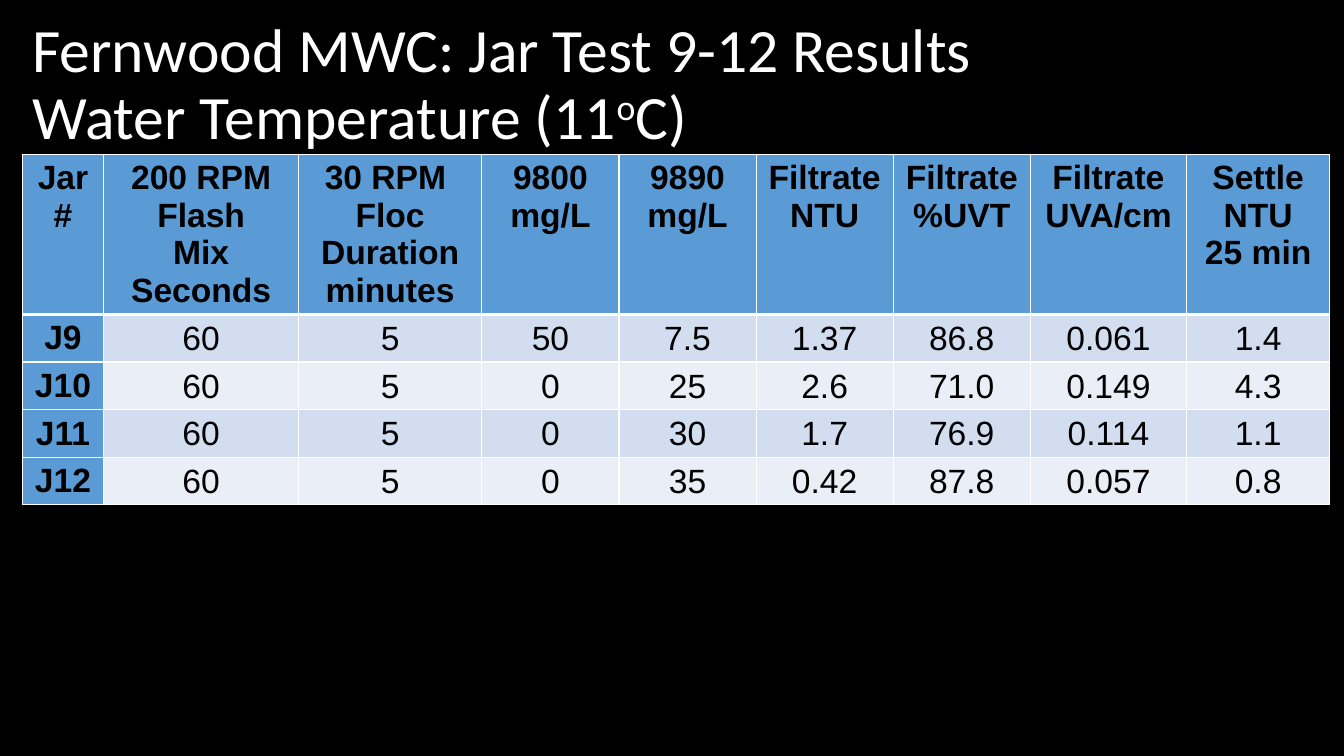
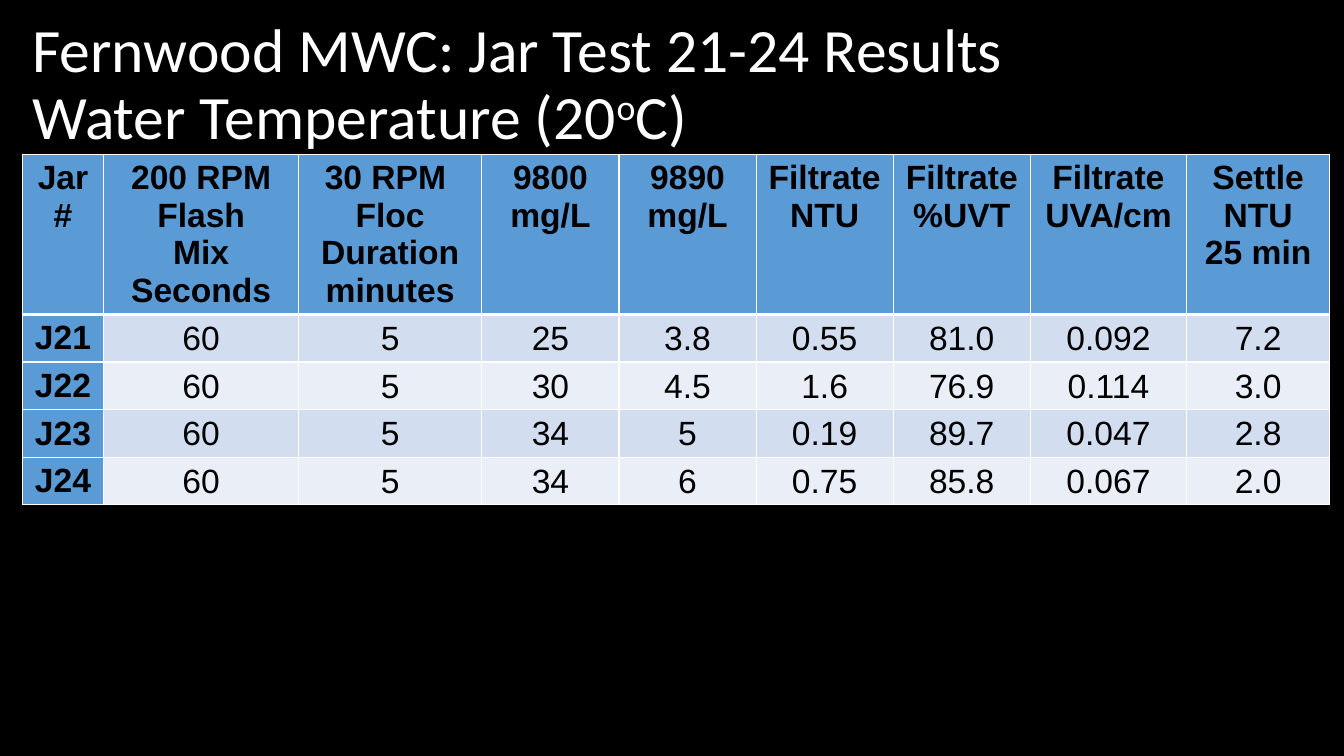
"""Build two slides of jar test results, one table per water temperature."""
from dataclasses import dataclass

from lxml import etree
from pptx import Presentation
from pptx.dml.color import RGBColor
from pptx.enum.text import MSO_ANCHOR, MSO_AUTO_SIZE, PP_ALIGN
from pptx.oxml.ns import qn
from pptx.util import Inches, Pt

CENTER, LEFT = PP_ALIGN.CENTER, PP_ALIGN.LEFT
MIDDLE, TOP = MSO_ANCHOR.MIDDLE, MSO_ANCHOR.TOP
NO_AUTOFIT = MSO_AUTO_SIZE.NONE

BLACK = RGBColor(0x00, 0x00, 0x00)
WHITE = RGBColor(0xFF, 0xFF, 0xFF)
HEADING_BLUE = RGBColor(0x5B, 0x9B, 0xD5)
ROW_BANDS = (RGBColor(0xD2, 0xDE, 0xEF), RGBColor(0xEA, 0xEF, 0xF7))

TITLE_BOX = {"left": Inches(0.22), "top": Inches(0.13),
             "width": Inches(12.2), "height": Inches(1.45)}
TITLE_FRAME = {"vertical_anchor": MIDDLE, "auto_size": NO_AUTOFIT, "word_wrap": True}
TITLE_PARAGRAPH = {"alignment": LEFT, "line_spacing": 0.9}
TITLE_FONT = {"name": "Calibri", "size": Pt(44)}
CELL_FONT = {"name": "Arial", "size": Pt(24)}
HEADING_CELL = {"vertical_anchor": TOP}
READING_CELL = {"vertical_anchor": MIDDLE, "margin_left": Inches(0.01),
                "margin_right": Inches(0.01), "margin_top": Inches(0.01),
                "margin_bottom": 0}

TABLE_LEFT, TABLE_TOP = 0.22, 1.53
COLUMN_WIDTHS = (0.81, 1.93, 1.82, 1.36, 1.36, 1.36, 1.36, 1.55, 1.42)
HEADING_HEIGHT, READING_HEIGHT = 1.59, 0.47
THIN_RULE, HEADING_RULE = 1, 3
HEADINGS = ("Jar\v#", "200 RPM\nFlash\nMix\nSeconds", "30 RPM \nFloc\nDuration\nminutes",
            "9800\nmg/L", "9890\nmg/L", "Filtrate\nNTU", "Filtrate\n%UVT",
            "Filtrate\nUVA/cm", "Settle\nNTU\n25 min")
FLASH_MIX_SECONDS, FLOC_MINUTES = "60", "5"


@dataclass(frozen=True)
class JarTest:
    """A run of jars at one water temperature; each reading row starts at 9800 mg/L."""
    first_jar: int
    celsius: int
    readings: tuple[str, ...]

    @property
    def last_jar(self) -> int:
        """Return the number of the last jar."""
        return self.first_jar + len(self.readings) - 1

    def rows(self) -> list[tuple[str, ...]]:
        """Return the headings and one full row for each jar."""
        jars = [(f"J{number}", FLASH_MIX_SECONDS, FLOC_MINUTES, *reading.split())
                for number, reading in enumerate(self.readings, self.first_jar)]
        return [HEADINGS, *jars]


JAR_TESTS = (
    JarTest(9, 11, ("50 7.5 1.37 86.8 0.061 1.4",
                    "0 25 2.6 71.0 0.149 4.3",
                    "0 30 1.7 76.9 0.114 1.1",
                    "0 35 0.42 87.8 0.057 0.8")),
    JarTest(21, 20, ("25 3.8 0.55 81.0 0.092 7.2",
                     "30 4.5 1.6 76.9 0.114 3.0",
                     "34 5 0.19 89.7 0.047 2.8",
                     "34 6 0.75 85.8 0.067 2.0")),
)


def apply_format(target: object, values: dict) -> None:
    """Set every format value on the target."""
    for name, value in values.items():
        setattr(target, name, value)


def style_runs(paragraph, font: dict, color: RGBColor) -> None:
    """Give all runs of a paragraph one font and colour."""
    for run in paragraph.runs:
        apply_format(run.font, font)
        run.font.color.rgb = color


def add_title(slide, test: JarTest) -> None:
    """Fill the title, with a raised degree mark."""
    frame = slide.shapes.title.text_frame
    apply_format(frame, TITLE_FRAME)
    paragraph = frame.paragraphs[0]
    apply_format(paragraph, TITLE_PARAGRAPH)
    paragraph.text = (f"Fernwood MWC: Jar Test {test.first_jar}-{test.last_jar} Results\v"
                      f"Water Temperature ({test.celsius}")
    degree, unit = paragraph.add_run(), paragraph.add_run()
    degree.text, unit.text = "o", "C)"
    style_runs(paragraph, TITLE_FONT, WHITE)
    degree.font._element.set("baseline", "30000")


def set_borders(cell, top: float, bottom: float) -> None:
    """Rule all four sides of a cell in white, with widths in points."""
    properties = cell._tc.get_or_add_tcPr()
    for side, width in {"L": THIN_RULE, "R": THIN_RULE, "T": top, "B": bottom}.items():
        line = etree.SubElement(properties, qn(f"a:ln{side}"), w=str(Pt(width)))
        fill = etree.SubElement(line, qn("a:solidFill"))
        etree.SubElement(fill, qn("a:srgbClr"), val=str(WHITE))


def fill_cell(cell, text: str, row: int, column: int) -> None:
    """Write and format one cell by its place in the table."""
    is_heading = row == 0 or column == 0
    cell.text = text
    apply_format(cell, HEADING_CELL if is_heading else READING_CELL)
    set_borders(cell, top=HEADING_RULE if row == 1 else THIN_RULE,
                bottom=HEADING_RULE if row == 0 else THIN_RULE)
    cell.fill.solid()
    cell.fill.fore_color.rgb = HEADING_BLUE if is_heading else ROW_BANDS[(row - 1) % 2]
    for paragraph in cell.text_frame.paragraphs:
        paragraph.alignment = CENTER
        style_runs(paragraph, {**CELL_FONT, "bold": is_heading}, BLACK)


def add_results(slide, test: JarTest) -> None:
    """Add the results table of one jar test."""
    rows = test.rows()
    heights = [HEADING_HEIGHT] + [READING_HEIGHT] * len(test.readings)
    table = slide.shapes.add_table(
        len(rows), len(COLUMN_WIDTHS), Inches(TABLE_LEFT), Inches(TABLE_TOP),
        Inches(sum(COLUMN_WIDTHS)), Inches(sum(heights))).table
    apply_format(table, {"first_row": True, "first_col": True, "horz_banding": True})
    for table_column, width in zip(table.columns, COLUMN_WIDTHS):
        table_column.width = Inches(width)
    for row, (texts, height) in enumerate(zip(rows, heights)):
        table.rows[row].height = Inches(height)
        for column, text in enumerate(texts):
            fill_cell(table.cell(row, column), text, row, column)


def main() -> None:
    """Build and save the presentation."""
    presentation = Presentation()
    apply_format(presentation, {"slide_width": Inches(13.33), "slide_height": Inches(7.5)})
    backdrop = presentation.slide_master.background.fill
    backdrop.solid()
    backdrop.fore_color.rgb = BLACK
    title_only = presentation.slide_layouts.get_by_name("Title Only")
    apply_format(title_only.placeholders[0], TITLE_BOX)
    for test in JAR_TESTS:
        slide = presentation.slides.add_slide(title_only)
        add_title(slide, test)
        add_results(slide, test)
    presentation.save("out.pptx")


if __name__ == "__main__":
    main()
